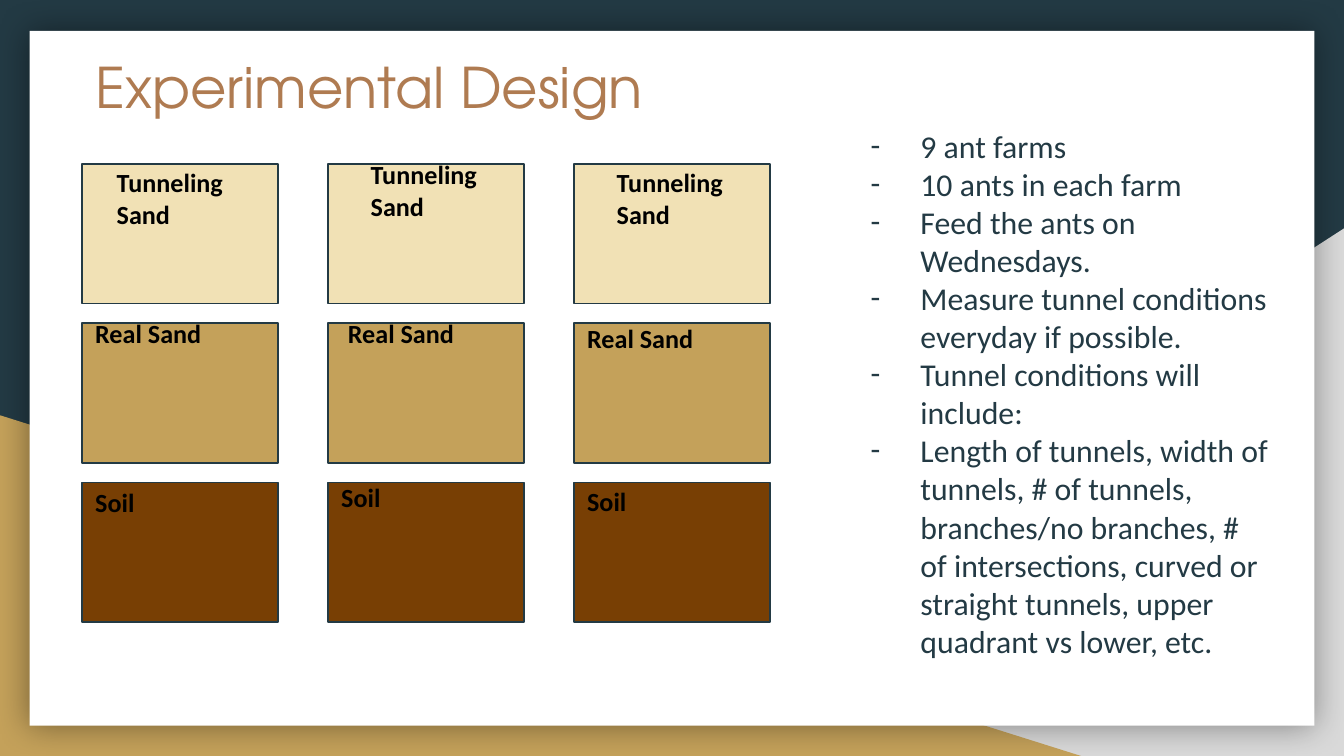
from lxml import etree
from pptx import Presentation
from pptx.dml.color import RGBColor
from pptx.enum.shapes import MSO_SHAPE
from pptx.oxml.ns import qn
from pptx.util import Inches, Pt

RECT = MSO_SHAPE.RECTANGLE
WEDGE = MSO_SHAPE.RIGHT_TRIANGLE
COLORS = {
    "navy": "233A44", "gray": "D9D9D9", "gold": "C4A15A", "white": "FFFFFF",
    "copper": "AF7B51", "sand": "F1E1B5", "soil": "783F04", "black": "000000",
}
LEFTS = [0.61 + 1.83 * col for col in range(3)]
TOPS = [1.22 + 1.185 * row for row in range(3)]
FILLS = ["sand", "gold", "soil"]
LABELS = [
    ("Tunneling Sand", [(0.77, 1.14, 1.03, 0.22), (2.66, 1.18, 1.03, 0.1),
                        (4.49, 1.14, 1.03, 0.37)]),
    ("Real Sand", [(0.61, 2.26, 1.46, 0.42), (2.49, 2.26, 1.37, 0.31),
                   (4.27, 2.3, 1.37, 0.42)]),
    ("Soil", [(0.61, 3.52, 1.21, 0.31), (2.44, 3.48, 1.21, 0.37),
              (4.27, 3.51, 1.03, 0.31)]),
]
NOTES = [
    "9 ant farms",
    "10 ants in each farm",
    "Feed the ants on Wednesdays.",
    "Measure tunnel conditions everyday if possible.",
    "Tunnel conditions will include:",
    "Length of tunnels, width of tunnels, # of tunnels, branches/no branches, "
    "# of intersections, curved or straight tunnels, upper quadrant vs lower, etc.",
]


def color(name):
    return RGBColor.from_string(COLORS[name])


def add_block(slide, kind, box, fill, line=None):
    shape = slide.shapes.add_shape(kind, *map(Inches, box))
    shape.shadow.inherit = False
    shape.fill.solid()
    shape.fill.fore_color.rgb = color(fill)
    if line:
        shape.line.color.rgb = color(line)
        shape.line.width = Pt(0.75)
    else:
        shape.line.fill.background()
    return shape


def add_glow(shape):
    effects = shape._element.spPr.find(qn("a:effectLst"))
    glow = etree.SubElement(effects, qn("a:outerShdw"), blurRad=str(Pt(18)),
                            dist="0", dir="0", algn="ctr", rotWithShape="0")
    tint = etree.SubElement(glow, qn("a:srgbClr"), val=COLORS["black"])
    etree.SubElement(tint, qn("a:alpha"), val="40000")


def add_dash(para, tint, font, size):
    props = para._p.get_or_add_pPr()
    props.set("marL", str(Inches(0.5)))
    props.set("indent", str(Inches(-0.37)))
    shade = etree.SubElement(props, qn("a:buClr"))
    etree.SubElement(shade, qn("a:srgbClr"), val=COLORS[tint])
    etree.SubElement(props, qn("a:buSzPts"), val=str(size * 100))
    etree.SubElement(props, qn("a:buFont"), typeface=font)
    etree.SubElement(props, qn("a:buChar"), char="-")


def add_text(slide, box, lines, size=14, font="Calibri", tint="black",
             bold=False, dash=False):
    frame = slide.shapes.add_textbox(*map(Inches, box)).text_frame
    frame.word_wrap = True
    frame.margin_left = frame.margin_right = Inches(0.1)
    frame.margin_top = frame.margin_bottom = Inches(0.1)
    for num, line in enumerate(lines):
        para = frame.add_paragraph() if num else frame.paragraphs[0]
        run = para.add_run()
        run.text = line
        run.font.size = Pt(size)
        run.font.name = font
        run.font.bold = bold
        run.font.color.rgb = color(tint)
        if dash:
            add_dash(para, tint, font, size)


def add_back(slide):
    slide.background.fill.solid()
    slide.background.fill.fore_color.rgb = color("navy")
    wedge = add_block(slide, WEDGE, (3.92, 1.7, 6.08, 3.93), "gray")
    wedge._element.spPr.xfrm.set("flipH", "1")
    add_block(slide, WEDGE, (0, 3.09, 8.06, 2.54), "gold")
    add_glow(add_block(slide, RECT, (0.22, 0.23, 9.56, 5.17), "white"))


def add_farms(slide):
    for top, fill in zip(TOPS, FILLS):
        for left in LEFTS:
            add_block(slide, RECT, (left, top, 1.46, 1.04), fill, line="navy")
    for label, boxes in LABELS:
        for box in boxes:
            add_text(slide, box, [label], bold=True)


def main():
    deck = Presentation()
    deck.slide_width = Inches(10)
    deck.slide_height = Inches(5.625)
    slide = deck.slides.add_slide(deck.slide_layouts[6])
    add_back(slide)
    add_text(slide, (0.61, 0.29, 8.21, 1.04), ["Experimental Design"],
             size=30, font="TeX Gyre Adventor", tint="copper")
    add_farms(slide)
    add_text(slide, (6.25, 0.84, 3.29, 4.17), NOTES,
             size=17, tint="navy", dash=True)
    deck.save("out.pptx")


if __name__ == "__main__":
    main()
